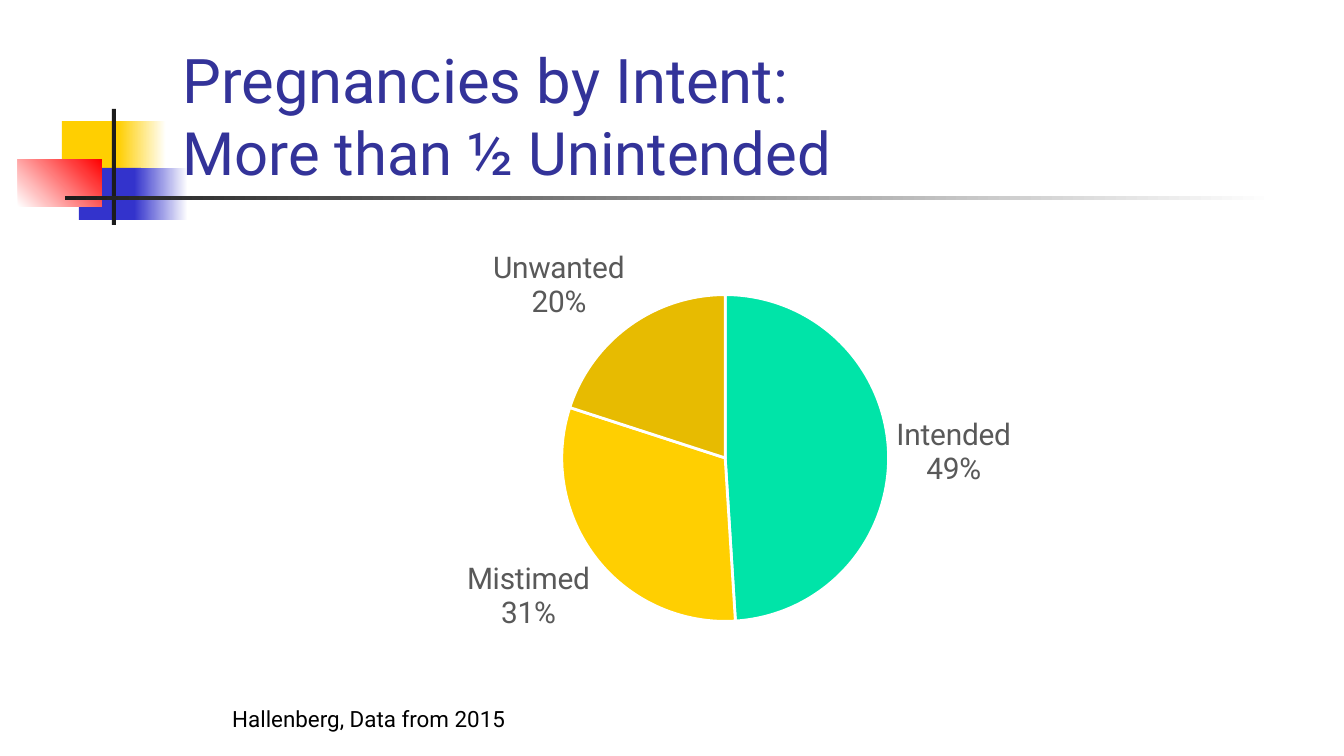
from lxml import etree
from pptx import Presentation
from pptx.chart.data import CategoryChartData
from pptx.dml.color import RGBColor
from pptx.enum.chart import XL_CHART_TYPE, XL_LABEL_POSITION
from pptx.enum.shapes import MSO_SHAPE
from pptx.enum.text import MSO_ANCHOR
from pptx.oxml import parse_xml
from pptx.oxml.ns import nsdecls, qn
from pptx.util import Pt

PIE = XL_CHART_TYPE.PIE
OUTSIDE_END = XL_LABEL_POSITION.OUTSIDE_END
RECTANGLE = MSO_SHAPE.RECTANGLE
TOP, BOTTOM = MSO_ANCHOR.TOP, MSO_ANCHOR.BOTTOM

WHITE = RGBColor(0xFF, 0xFF, 0xFF)
BLACK = RGBColor(0x00, 0x00, 0x00)
CHARCOAL = RGBColor(0x1C, 0x1C, 0x1C)
GREY = RGBColor(0x59, 0x59, 0x59)
YELLOW = RGBColor(0xFF, 0xCF, 0x01)
GOLD = RGBColor(0xE7, 0xBB, 0x01)
GREEN = RGBColor(0x00, 0xE4, 0xA8)
BLUE = RGBColor(0x33, 0x33, 0xCC)
RED = RGBColor(0xFF, 0x00, 0x00)
NAVY = RGBColor(0x33, 0x33, 0x99)

FONT = "Roboto"
EMU_PER_PX = 914400 / 134.4

DECORATION = [
    ((62, 121, 65, 52), (YELLOW,), 0),
    ((118, 121, 48, 52), (YELLOW, WHITE), 0),
    ((79, 168, 62, 52), (BLUE,), 0),
    ((134, 168, 54, 52), (BLUE, WHITE), 0),
    ((18, 159, 84, 48), (WHITE, RED), 45),
    ((112, 109, 4, 116), (CHARCOAL,), 0),
    ((65, 196, 1210, 4), (CHARCOAL, WHITE), 0),
]
INTENTS = [
    ("Intended", 49, GREEN),
    ("Mistimed", 31, YELLOW),
    ("Unwanted", 20, GOLD),
]


def px(*lengths):
    return [round(length * EMU_PER_PX) for length in lengths]


def add_block(slide, box, colors, angle):
    block = slide.shapes.add_shape(RECTANGLE, *px(*box))
    block.shadow.inherit = False
    block.line.fill.background()
    if len(colors) == 1:
        block.fill.solid()
        block.fill.fore_color.rgb = colors[0]
        return
    block.fill.gradient()
    block.fill.gradient_angle = angle
    for stop, color in zip(block.fill.gradient_stops, colors):
        stop.color.rgb = color


def add_text(slide, box, text, sizes, color, anchor=TOP):
    frame = slide.shapes.add_textbox(*px(*box)).text_frame
    frame.word_wrap = True
    frame.vertical_anchor = anchor
    paragraph = frame.paragraphs[0]
    for index, (line, size) in enumerate(zip(text.split("\n"), sizes)):
        if index:
            paragraph.add_line_break()
        run = paragraph.add_run()
        run.text = line
        run.font.name = FONT
        run.font.size = Pt(size)
        run.font.color.rgb = color


def place_plot(chart, **fractions):
    plot_area = chart._chartSpace.chart.plotArea
    for layout in plot_area.findall(qn("c:layout")):
        plot_area.remove(layout)
    sizes = "".join(f'<c:{side} val="{value}"/>' for side, value in fractions.items())
    plot_area.insert(0, parse_xml(
        f'<c:layout {nsdecls("c")}><c:manualLayout><c:layoutTarget val="inner"/>'
        f'<c:xMode val="edge"/><c:yMode val="edge"/>{sizes}'
        '</c:manualLayout></c:layout>'))


def label_slices(plot):
    plot.has_data_labels = True
    labels = plot.data_labels
    labels.show_category_name = True
    labels.show_percentage = True
    labels.show_value = False
    labels.number_format = "0%"
    labels.number_format_is_linked = False
    labels.position = OUTSIDE_END
    labels.font.name = FONT
    labels.font.size = Pt(16)
    labels.font.color.rgb = GREY
    separator = etree.Element(qn("c:separator"))
    separator.text = "\n"
    labels._element.find(qn("c:showBubbleSize")).addnext(separator)


def add_pie(slide, box, slices):
    names, shares, colors = zip(*slices)
    data = CategoryChartData()
    data.categories = names
    data.add_series("Series 1", shares)
    chart = slide.shapes.add_chart(PIE, *px(*box), data).chart
    chart.has_legend = False
    chart.has_title = False
    chart.font.name = FONT
    chart.font.size = Pt(10)
    chart.font.color.rgb = BLACK
    plot = chart.plots[0]
    plot.vary_by_categories = True
    for index, color in enumerate(colors):
        point = plot.series[0].points[index].format
        point.fill.solid()
        point.fill.fore_color.rgb = color
        point.line.color.rgb = WHITE
        point.line.width = Pt(1.5)
    label_slices(plot)
    place_plot(chart, x=0.35, y=0.16, w=0.29, h=0.72)


def main():
    deck = Presentation()
    deck.slide_width, deck.slide_height = px(1344, 756)
    slide = deck.slides.add_slide(deck.slide_layouts[6])
    for box, colors, angle in DECORATION:
        add_block(slide, box, colors, angle)
    add_text(slide, (169, 68, 1145, 126),
             "Pregnancies by Intent: \nMore than ½ Unintended",
             sizes=(33, 32), color=NAVY, anchor=BOTTOM)
    add_pie(slide, (160, 222, 1142, 454), INTENTS)
    add_text(slide, (219, 699, 773, 40), "Hallenberg, Data from 2015",
             sizes=(12,), color=BLACK)
    deck.save("out.pptx")


if __name__ == "__main__":
    main()
